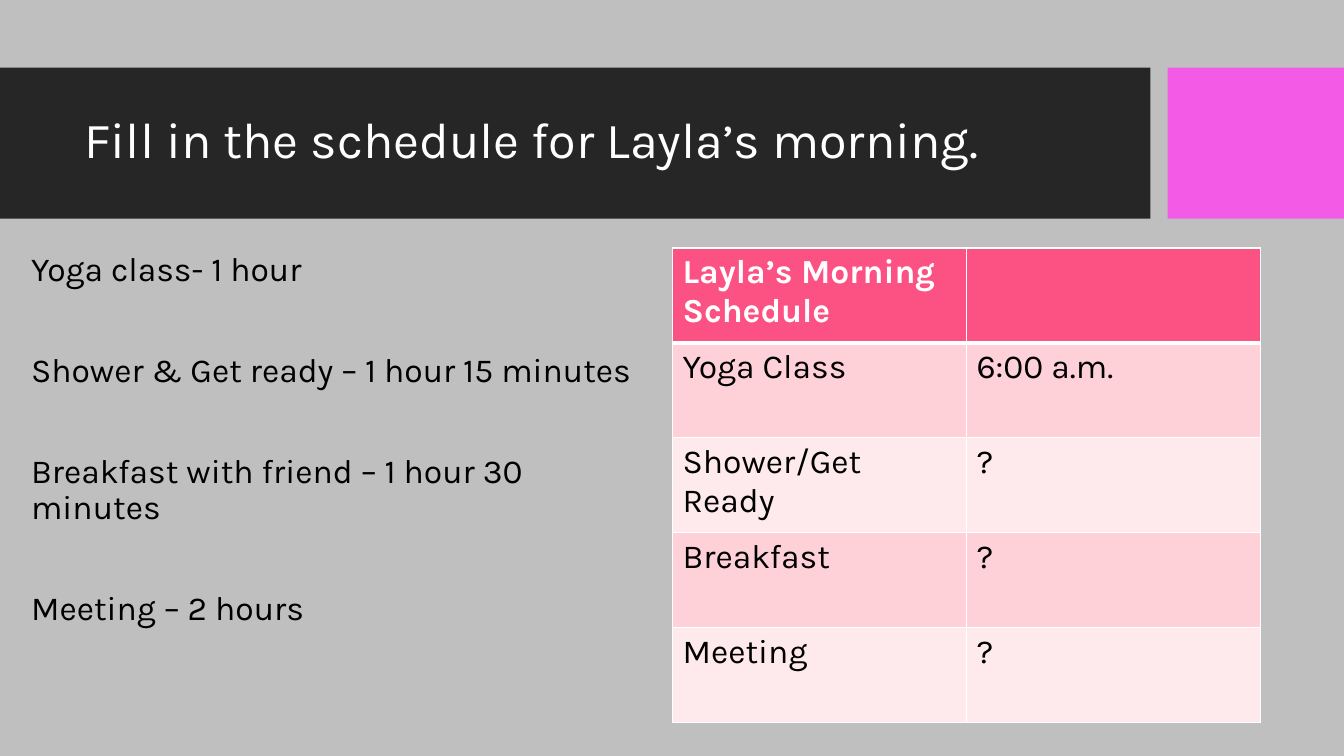
from lxml.etree import SubElement
from pptx import Presentation
from pptx.dml.color import RGBColor
from pptx.enum.shapes import MSO_SHAPE
from pptx.enum.text import MSO_ANCHOR
from pptx.oxml.ns import qn
from pptx.util import Inches, Pt

FONT = "Karla"
GREY = RGBColor(0xBF, 0xBF, 0xBF)
CHARCOAL = RGBColor(0x26, 0x26, 0x26)
MAGENTA = RGBColor(0xF3, 0x5A, 0xE6)
PINK = RGBColor(0xFC, 0x52, 0x83)
ROSE = RGBColor(0xFE, 0xD1, 0xD9)
BLUSH = RGBColor(0xFE, 0xE9, 0xED)
WHITE = RGBColor(0xFF, 0xFF, 0xFF)
BLACK = RGBColor(0, 0, 0)

DURATIONS = [
    "Yoga class- 1 hour",
    "Shower & Get ready – 1 hour 15 minutes",
    "Breakfast with friend – 1 hour 30 minutes",
    "Meeting – 2 hours",
]
SCHEDULE = [
    ("Layla’s Morning Schedule", ""),
    ("Yoga Class", "6:00 a.m."),
    ("Shower/Get Ready", "?"),
    ("Breakfast", "?"),
    ("Meeting", "?"),
]


def style_font(font, size, color, bold=False):
    font.name = FONT
    font.size = Pt(size)
    font.bold = bold
    font.color.rgb = color


def add_band(slide, left, width, color):
    shape = slide.shapes.add_shape(
        MSO_SHAPE.RECTANGLE, Inches(left), Inches(0.67), Inches(width), Inches(1.5)
    )
    shape.shadow.inherit = False
    shape.fill.solid()
    shape.fill.fore_color.rgb = color
    shape.line.fill.background()


def add_text(slide, position, lines, size, color, anchor=MSO_ANCHOR.TOP, gap=0):
    box = slide.shapes.add_textbox(*[Inches(length) for length in position])
    text_frame = box.text_frame
    text_frame.word_wrap = True
    text_frame.vertical_anchor = anchor
    text_frame.text = "\n".join(lines)
    for index, paragraph in enumerate(text_frame.paragraphs):
        paragraph.line_spacing = 0.9
        paragraph.space_before = Pt(gap if index else 0)
        for run in paragraph.runs:
            style_font(run.font, size, color)


def set_borders(cell, widths):
    properties = cell._tc.get_or_add_tcPr()
    for position, (side, width) in enumerate(widths.items()):
        line = properties.makeelement(qn(f"a:{side}"), {"w": str(Pt(width))})
        fill = SubElement(line, qn("a:solidFill"))
        SubElement(fill, qn("a:srgbClr"), val=str(WHITE))
        properties.insert(position, line)


def add_schedule(slide):
    row_count, column_count = len(SCHEDULE), len(SCHEDULE[0])
    table = slide.shapes.add_table(
        row_count, column_count, Inches(6.67), Inches(2.46), Inches(5.83), Inches(4.71)
    ).table
    for row_index, row in enumerate(SCHEDULE):
        header = row_index == 0
        fill_color = PINK if header else (BLUSH, ROSE)[row_index % 2]
        for column_index, text in enumerate(row):
            cell = table.cell(row_index, column_index)
            cell.text = text
            cell.fill.solid()
            cell.fill.fore_color.rgb = fill_color
            top = 3 if row_index == 1 else 1
            bottom = 3 if header else 1
            set_borders(cell, {"lnL": 1, "lnR": 1, "lnT": top, "lnB": bottom})
            style_font(
                cell.text_frame.paragraphs[0].font, 24, WHITE if header else BLACK, header
            )
            for run in cell.text_frame.paragraphs[0].runs:
                style_font(run.font, 24, WHITE if header else BLACK, header)


def main():
    presentation = Presentation()
    presentation.slide_width = Inches(13.33)
    presentation.slide_height = Inches(7.5)
    slide = presentation.slides.add_slide(presentation.slide_layouts[6])
    slide.background.fill.solid()
    slide.background.fill.fore_color.rgb = GREY

    add_band(slide, 0, 11.41, CHARCOAL)
    add_band(slide, 11.58, 1.75, MAGENTA)
    add_text(
        slide,
        (0.74, 0.82, 10.51, 1.18),
        ["Fill in the schedule for Layla’s morning."],
        36,
        WHITE,
        MSO_ANCHOR.MIDDLE,
    )
    add_schedule(slide)
    add_text(slide, (0.21, 2.46, 6.2, 4.71), DURATIONS, 24, BLACK, gap=46)
    presentation.save("out.pptx")


if __name__ == "__main__":
    main()
